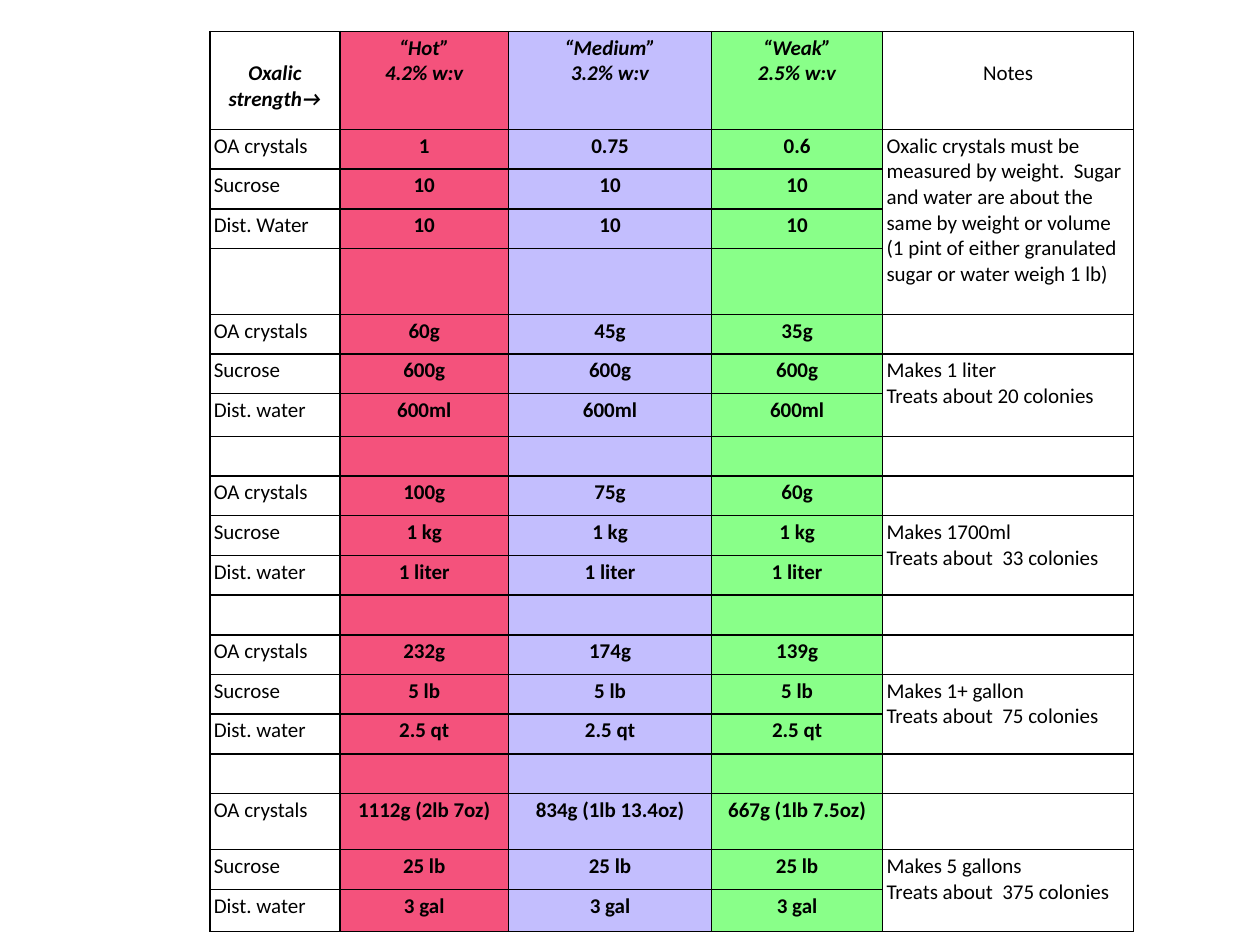
from lxml import etree
from pptx import Presentation
from pptx.dml.color import RGBColor
from pptx.enum import text
from pptx.oxml.ns import qn
from pptx.util import Pt

BLACK = RGBColor(0x00, 0x00, 0x00)
PINK = RGBColor(0xF4, 0x52, 0x7C)
LILAC = RGBColor(0xC3, 0xBE, 0xFE)
GREEN = RGBColor(0x89, 0xFF, 0x89)
FILLS = [None, PINK, LILAC, GREEN, None]
PAD = 2.2
LINE = 14.65

wide = [74.2, 96.5, 115.9, 97.9, 143.3]
high = [22.7] * 20
high[0], high[4], high[7], high[17], high[19] = 56, 37.6, 24.4, 32.1, 24

names = ["OA crystals", "Sucrose", "Dist. water"]
doses = [
    [["1", "0.75", "0.6"], ["10"] * 3, ["10"] * 3],
    [["60g", "45g", "35g"], ["600g"] * 3, ["600ml"] * 3],
    [["100g", "75g", "60g"], ["1 kg"] * 3, ["1 liter"] * 3],
    [["232g", "174g", "139g"], ["5 lb"] * 3, ["2.5 qt"] * 3],
    [["1112g (2lb 7oz)", "834g (1lb 13.4oz)", "667g (1lb 7.5oz)"],
     ["25 lb"] * 3, ["3 gal"] * 3],
]
notes = [
    "Oxalic crystals must be measured by weight.  Sugar and water are about "
    "the same by weight or volume (1 pint of either granulated sugar or water "
    "weigh 1 lb)",
    "Makes 1 liter\nTreats about 20 colonies",
    "Makes 1700ml\nTreats about  33 colonies",
    "Makes 1+ gallon\nTreats about  75 colonies",
    "Makes 5 gallons\nTreats about  375 colonies",
]

rows = [["Oxalic strength→", "“Hot”\n4.2% w:v", "“Medium”\n3.2% w:v",
         "“Weak”\n2.5% w:v", "Notes"]]
for group, note in zip(doses, notes):
    if len(rows) > 1:
        rows.append([""] * 5)
    for name, dose in zip(names, group):
        rows.append([name] + dose + [""])
    rows[-3 if note == notes[0] else -2][4] = note
rows[3][0] = "Dist. Water"

deck = Presentation()
deck.slide_width, deck.slide_height = Pt(720), Pt(540)
slide = deck.slides.add_slide(deck.slide_layouts[6])
grid = slide.shapes.add_table(20, 5, Pt(120), Pt(18), Pt(sum(wide)), Pt(sum(high))).table
grid.first_row = grid.horz_banding = False
for col, size in zip(grid.columns, wide):
    col.width = Pt(size)
for row, size in zip(grid.rows, high):
    row.height = Pt(size)

for top, end in [(1, 4), (6, 7), (10, 11), (14, 15), (18, 19)]:
    grid.cell(top, 4).merge(grid.cell(end, 4))

for r, row in enumerate(rows):
    for c, words in enumerate(row):
        cell = grid.cell(r, c)
        cell.margin_left = cell.margin_right = Pt(PAD)
        cell.margin_top = cell.margin_bottom = Pt(PAD)
        if r == 0 and c in (0, 4):
            cell.margin_top = Pt(PAD + LINE)
        if FILLS[c]:
            cell.fill.solid()
            cell.fill.fore_color.rgb = FILLS[c]
        else:
            cell.fill.background()
        props = cell._tc.get_or_add_tcPr()
        for i, side in enumerate(["a:lnL", "a:lnR", "a:lnT", "a:lnB"]):
            edge = etree.Element(qn(side), w=str(Pt(1)))
            paint = etree.SubElement(edge, qn("a:solidFill"))
            etree.SubElement(paint, qn("a:srgbClr"), val=str(BLACK))
            props.insert(i, edge)
        frame = cell.text_frame
        for i, line in enumerate(words.split("\n")):
            para = frame.add_paragraph() if i else frame.paragraphs[0]
            if not line:
                etree.SubElement(para._p, qn("a:endParaRPr"), sz="1200")
                continue
            if r == 0 or 0 < c < 4:
                para.alignment = text.PP_ALIGN.CENTER
            run = para.add_run()
            run.text = line
            run.font.name = "Calibri"
            run.font.size = Pt(12)
            run.font.color.rgb = BLACK
            run.font.bold = 0 < c < 4 or r == c == 0
            run.font.italic = r == 0 and c < 4

deck.save("out.pptx")
